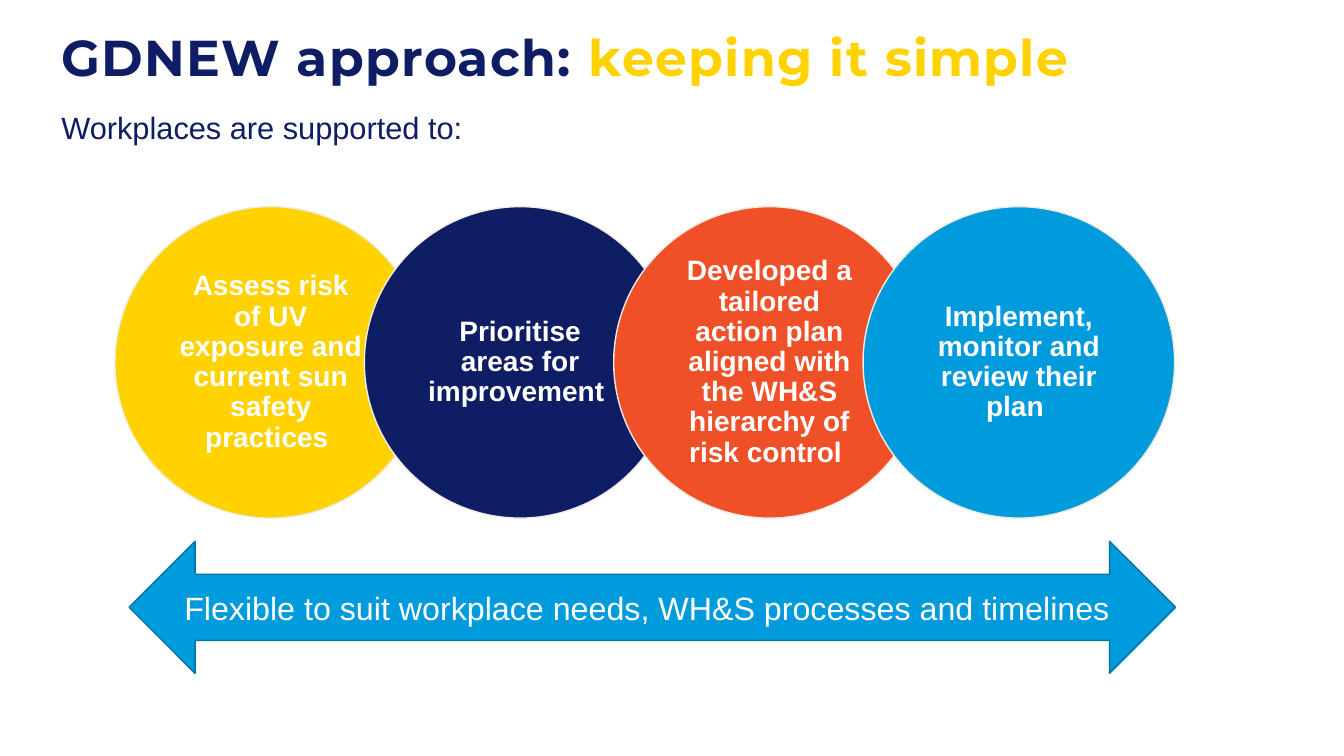
from pptx import Presentation
from pptx.dml.color import RGBColor
from pptx.enum import shapes, text
from pptx.util import Inches, Pt

NAVY, GOLD, BLUE, WHITE = "0F1E64", "FFD200", "009BDC", "FFFFFF"
TITLE = [("GDNEW approach: ", NAVY), ("keeping it simple", GOLD)]
INTRO = "Workplaces are supported to:"
STEPS = [
    ("Assess risk of UV exposure and current sun safety practices ", GOLD),
    ("Prioritise areas for improvement ", NAVY),
    ("Developed a tailored action plan aligned with the WH&S "
     "hierarchy of risk control ", "F05028"),
    ("Implement, monitor and review their plan ", BLUE),
]
BANNER = "Flexible to suit workplace needs, WH&S processes and timelines "

LEFT, LAST, TOP, SIZE = 1.14, 8.56, 2.05, 3.09
STEP = (LAST - LEFT) / (len(STEPS) - 1)
INNER = 2.19
PAD = (SIZE - INNER) / 2


def color(code):
    return RGBColor.from_string(code)


def add_run(para, words, size, code, face="Arial", bold=False):
    run = para.add_run()
    run.text = words
    font = run.font
    font.size, font.name, font.bold = Pt(size), face, bold
    font.color.rgb = color(code)
    return run


def add_box(slide, *area):
    """Add a wrapping text box and return its frame."""
    frame = slide.shapes.add_textbox(*map(Inches, area)).text_frame
    frame.word_wrap = True
    return frame


def add_form(slide, kind, area, fill, line):
    form = slide.shapes.add_shape(kind, *map(Inches, area))
    form.shadow.inherit = False
    form.fill.solid()
    form.fill.fore_color.rgb = color(fill)
    form.line.color.rgb = color(line)
    form.line.width = Pt(1)
    return form


def center(frame):
    """Centre the text both ways and return its paragraph."""
    frame.vertical_anchor = text.MSO_ANCHOR.MIDDLE
    para = frame.paragraphs[0]
    para.alignment = text.PP_ALIGN.CENTER
    return para


def add_step(slide, index, words, fill):
    x = LEFT + index * STEP
    add_form(slide, shapes.MSO_SHAPE.OVAL, (x, TOP, SIZE, SIZE), fill, "EEECE1")
    frame = add_box(slide, x + PAD, TOP + PAD, INNER, INNER)
    frame.margin_left = frame.margin_right = Inches(0.17)
    frame.margin_top = frame.margin_bottom = Inches(0.03)
    para = center(frame)
    para.line_spacing = 0.9
    add_run(para, words, 20, WHITE, bold=True)


def main():
    deck = Presentation()
    deck.slide_width, deck.slide_height = Inches(13.33), Inches(7.5)
    slide = deck.slides.add_slide(deck.slide_layouts[6])

    para = add_box(slide, 0.51, 0.33, 12.82, 0.84).paragraphs[0]
    para.line_spacing = 0.8
    for words, code in TITLE:
        run = add_run(para, words, 36, code, "Montserrat", True)
        run.font._element.set("spc", "100")

    for index, (words, fill) in enumerate(STEPS):
        add_step(slide, index, words, fill)

    intro = add_box(slide, 0.51, 1.03, 6.51, 0.47)
    add_run(intro.paragraphs[0], INTRO, 22, NAVY)

    arrow = add_form(slide, shapes.MSO_SHAPE.LEFT_RIGHT_ARROW,
                     (1.28, 5.37, 10.38, 1.31), BLUE, "0073A3")
    add_run(center(arrow.text_frame), BANNER, 23, WHITE)
    deck.save("out.pptx")


if __name__ == "__main__":
    main()
